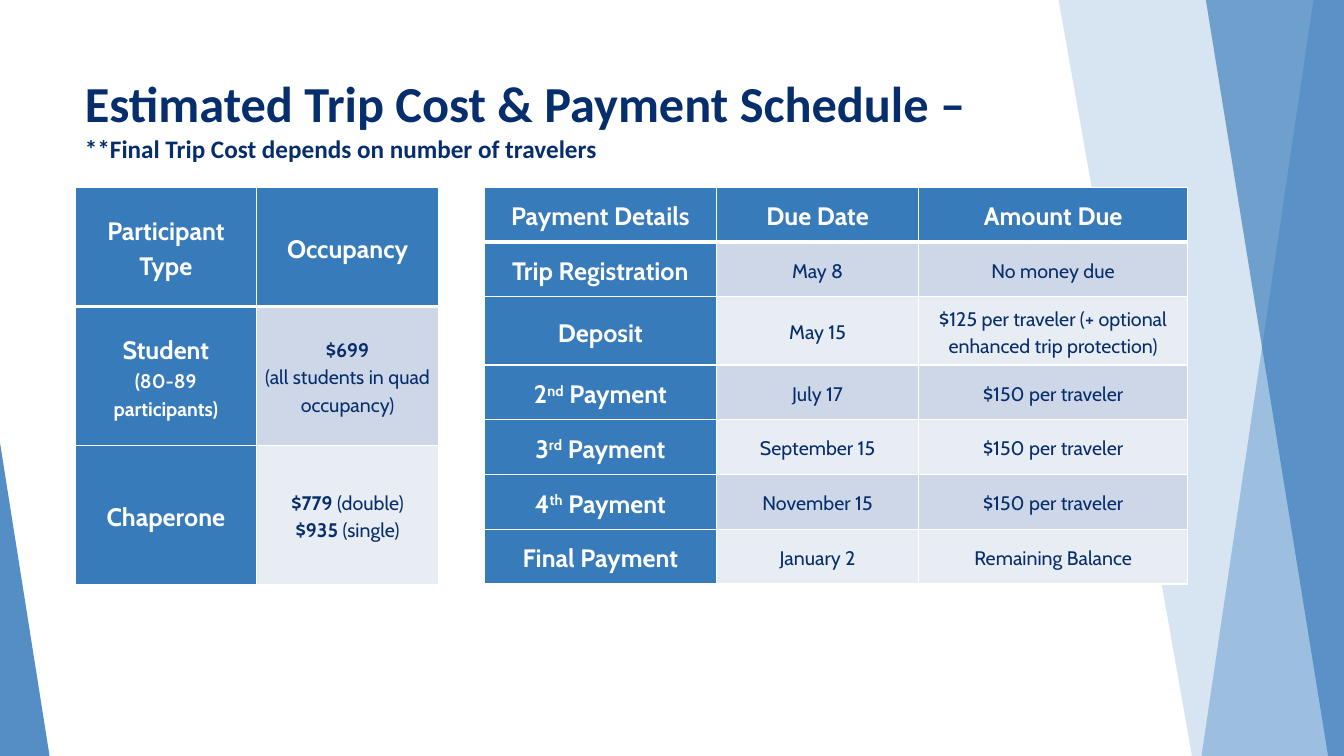
import copy
import dataclasses
import typing

import lxml.etree
import pptx
import pptx.dml.color
import pptx.enum.shapes
import pptx.enum.text
import pptx.oxml.ns
import pptx.util

Cm = pptx.util.Cm
Pt = pptx.util.Pt
qn = pptx.oxml.ns.qn

WIDE, HIGH = 33.87, 19.05
TOP = 4.72
HUES = {
    "navy": "072E6C",
    "blue": "387BBB",
    "sky": "84B0DA",
    "dark": "CED7E7",
    "light": "E8ECF3",
    "white": "FFFFFF",
}


@dataclasses.dataclass
class Part:
    text: str
    size: typing.Optional[int] = None
    bold: typing.Optional[bool] = None
    sup: bool = False


@dataclasses.dataclass
class Facet:
    points: list[tuple[float, float]]
    hue: str
    alpha: int


@dataclasses.dataclass
class Grid:
    left: float
    cols: list[float]
    rows: list[float]
    cells: list[list]


def shade(hue: str) -> pptx.dml.color.RGBColor:
    return pptx.dml.color.RGBColor.from_string(HUES[hue])


def write(par, text: str, *, size: int, hue: str, bold: bool = False,
          font: str = "Cabin", sup: bool = False) -> None:
    for i, line in enumerate(text.split("\n")):
        if i:
            par.add_line_break()
            par._p[-1].append(copy.deepcopy(run._r.rPr))
        if not line:
            continue
        run = par.add_run()
        run.text = line
        run.font.size = Pt(size)
        run.font.bold = bold
        run.font.name = font
        run.font.color.rgb = shade(hue)
        if sup:
            run._r.rPr.set("baseline", "30000")


def tint(shape, hue: str, alpha: int) -> None:
    shape.shadow.inherit = False
    shape.line.fill.background()
    shape.fill.solid()
    shape.fill.fore_color.rgb = shade(hue)
    node = shape.element.spPr.find(".//" + qn("a:srgbClr"))
    lxml.etree.SubElement(node, qn("a:alpha"), val=str(alpha * 1000))


def draw_facet(slide, facet: Facet) -> None:
    spots = [(Cm(x), Cm(y)) for x, y in facet.points]
    pen = slide.shapes.build_freeform(*spots[0])
    pen.add_line_segments(spots[1:], close=True)
    tint(pen.convert_to_shape(), facet.hue, facet.alpha)


def edge(cell, side: str, width: float) -> None:
    line = lxml.etree.SubElement(cell._tc.get_or_add_tcPr(), qn("a:ln" + side),
                                 w=str(Pt(width)))
    fill = lxml.etree.SubElement(line, qn("a:solidFill"))
    lxml.etree.SubElement(fill, qn("a:srgbClr"), val=HUES["white"])


def fill_cell(cell, paras: list[list[Part]], row: int, col: int) -> None:
    head = row == 0 or col == 0
    cell.margin_left = cell.margin_right = Cm(0.18)
    cell.margin_top = cell.margin_bottom = 0
    cell.vertical_anchor = pptx.enum.text.MSO_ANCHOR.MIDDLE
    for side in "LRTB":
        thick = (side, row) in (("B", 0), ("T", 1))
        edge(cell, side, 3 if thick else 1)
    cell.fill.solid()
    band = "dark" if row % 2 else "light"
    cell.fill.fore_color.rgb = shade("blue" if head else band)
    for i, parts in enumerate(paras):
        par = cell.text_frame.add_paragraph() if i else cell.text_frame.paragraphs[0]
        par.alignment = pptx.enum.text.PP_ALIGN.CENTER
        par.line_spacing = 1.15
        for part in parts:
            write(par, part.text, size=part.size or (18 if head else 14),
                  hue="white" if head else "navy",
                  bold=head if part.bold is None else part.bold, sup=part.sup)


def draw_grid(slide, grid: Grid) -> None:
    table = slide.shapes.add_table(
        len(grid.rows), len(grid.cols), Cm(grid.left), Cm(TOP),
        Cm(sum(grid.cols)), Cm(sum(grid.rows))).table
    for col, width in zip(table.columns, grid.cols):
        col.width = Cm(width)
    for row, height in zip(table.rows, grid.rows):
        row.height = Cm(height)
    for r, texts in enumerate(grid.cells):
        for c, text in enumerate(texts):
            paras = [[Part(text)]] if isinstance(text, str) else text
            fill_cell(table.cell(r, c), paras, r, c)


def nth(count: str, end: str) -> list[list[Part]]:
    return [[Part(count), Part(end, sup=True), Part(" Payment")]]


FACETS = [
    Facet([(26.68, 0), (WIDE, 0), (WIDE, HIGH), (30.04, HIGH)], "blue", 20),
    Facet([(33.1, 0), (WIDE, 0), (WIDE, HIGH), (30.28, HIGH)], "sky", 70),
    Facet([(30.39, 0), (WIDE, 0), (WIDE, HIGH), (33.47, HIGH)], "blue", 65),
]

SHARE = "$150 per traveler"
GRIDS = [
    Grid(1.89, [4.58] * 2, [3, 3.51, 3.51], [
        ["Participant Type", "Occupancy"],
        [[[Part("Student")], [Part("(80-89 participants)", size=14)]],
         [[Part("$699\n", bold=True), Part("(all students in quad occupancy)")]]],
        ["Chaperone",
         [[Part("$779 ", bold=True), Part("(double)\n"),
           Part("$935 ", bold=True), Part("(single)")]]],
    ]),
    Grid(12.2, [5.86, 5.09, 6.78], [1.38] * 2 + [1.72] + [1.38] * 4, [
        ["Payment Details", "Due Date", "Amount Due"],
        ["Trip Registration", "May 8", "No money due"],
        ["Deposit", "May 15",
         "$125 per traveler (+ optional enhanced trip protection)"],
        [nth("2", "nd"), "July 17", SHARE],
        [nth("3", "rd"), "September 15", SHARE],
        [nth("4", "th"), "November 15", SHARE],
        ["Final Payment", "January 2", "Remaining Balance"],
    ]),
]


def main() -> None:
    deck = pptx.Presentation()
    deck.slide_width, deck.slide_height = Cm(WIDE), Cm(HIGH)
    slide = deck.slides.add_slide(deck.slide_layouts[6])

    for facet in FACETS:
        draw_facet(slide, facet)
    wedge = slide.shapes.add_shape(
        pptx.enum.shapes.MSO_SHAPE.ISOSCELES_TRIANGLE,
        0, Cm(11.15), Cm(1.25), Cm(HIGH - 11.15))
    wedge.adjustments[0] = 0
    tint(wedge, "blue", 85)

    title = slide.shapes.add_textbox(Cm(1.89), Cm(1.7), Cm(26.8), Cm(2.8)).text_frame
    title.word_wrap = True
    par = title.paragraphs[0]
    write(par, "Estimated Trip Cost & Payment Schedule –\n", size=36, hue="navy",
          bold=True, font="Calibri")
    write(par, "**Final Trip Cost depends on number of travelers", size=18,
          hue="navy", bold=True, font="Calibri")

    for grid in GRIDS:
        draw_grid(slide, grid)
    deck.save("out.pptx")


if __name__ == "__main__":
    main()
